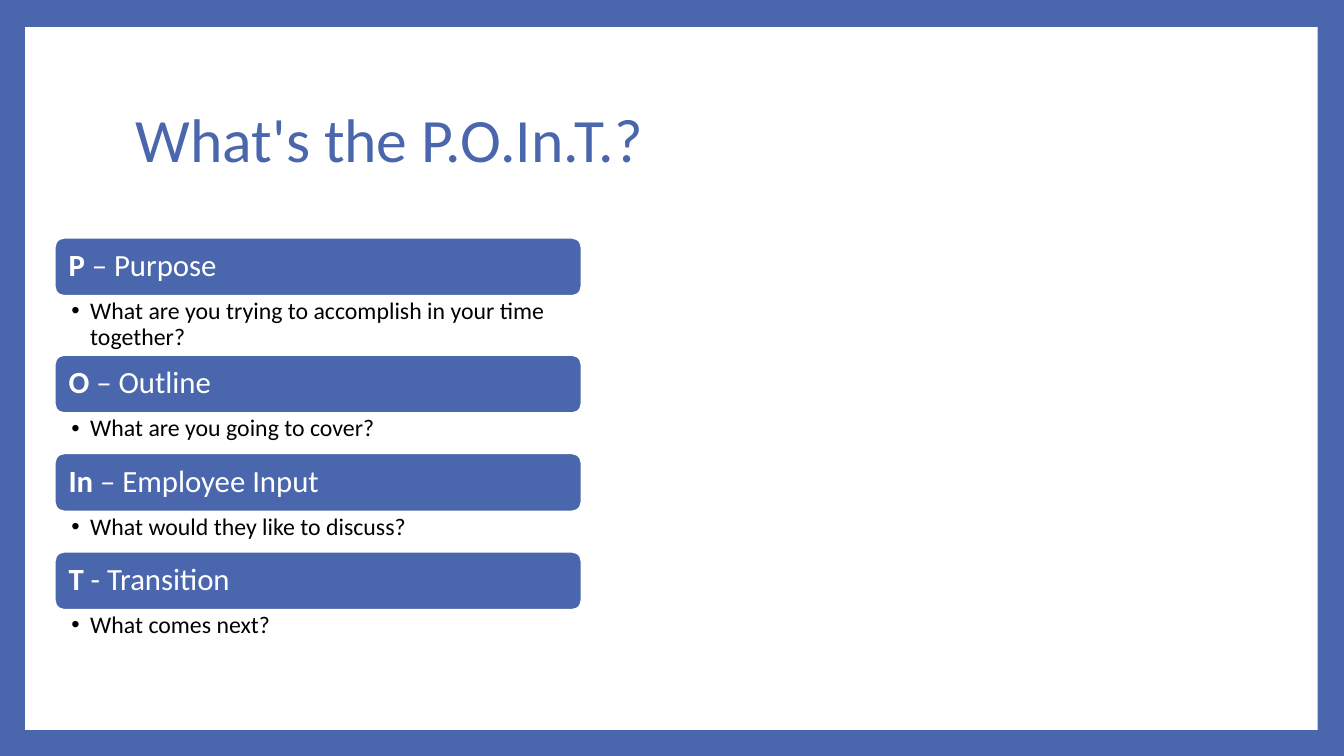
from lxml import etree
from pptx import Presentation
from pptx.dml.color import RGBColor
from pptx.enum.shapes import MSO_SHAPE
from pptx.enum.text import MSO_ANCHOR, PP_ALIGN
from pptx.oxml.ns import qn
from pptx.util import Pt

RECT, ROUNDED = MSO_SHAPE.RECTANGLE, MSO_SHAPE.ROUNDED_RECTANGLE
TOP, MIDDLE = MSO_ANCHOR.TOP, MSO_ANCHOR.MIDDLE
LEFT = PP_ALIGN.LEFT
COLORS = {"blue": "4A66AC", "white": "FFFFFF", "black": "000000"}


def color(name):
    return RGBColor.from_string(COLORS[name])


def write(shape, runs, size, font_color, anchor, inset_x, inset_y, bullet=False):
    tf = shape.text_frame
    tf.word_wrap = True
    tf.vertical_anchor = anchor
    tf.margin_left = tf.margin_right = Pt(inset_x)
    tf.margin_top = tf.margin_bottom = Pt(inset_y)
    p = tf.paragraphs[0]
    p.alignment = LEFT
    p.line_spacing = 0.9
    if bullet:
        pPr = p._p.get_or_add_pPr()
        pPr.set("marL", str(Pt(13.5)))
        pPr.set("indent", str(-Pt(13.5)))
        etree.SubElement(pPr, qn("a:buFont")).set("typeface", "Arial")
        etree.SubElement(pPr, qn("a:buChar")).set("char", "•")
    for text, bold in runs:
        r = p.add_run()
        r.text = text
        r.font.name = "Calibri"
        r.font.size = Pt(size)
        r.font.bold = bold
        r.font.color.rgb = color(font_color)


prs = Presentation()
prs.slide_width, prs.slide_height = Pt(960), Pt(540)
s = prs.slides.add_slide(prs.slide_layouts[6])
s.background.fill.solid()
s.background.fill.fore_color.rgb = color("blue")

panel = s.shapes.add_shape(RECT, Pt(18), Pt(19.3), Pt(923.3), Pt(502))
panel.shadow.inherit = False
panel.fill.solid()
panel.fill.fore_color.rgb = color("white")
panel.line.fill.background()

title = s.shapes.add_textbox(Pt(90), Pt(48.2), Pt(777.6), Pt(106.6))
write(title, [("What's the P.O.In.T.?", False)], 44, "blue", MIDDLE, 7.2, 3.6)

steps = [
    ("P", " – Purpose", "What are you trying to accomplish in your time together?", 42),
    ("O", " – Outline", "What are you going to cover?", 28.5),
    ("In", " – Employee Input", "What would they like to discuss?", 28.5),
    ("T", " - Transition", "What comes next?", 28.5),
]
left, top, width, bar_height = 39, 169.7, 376.5, 41.75
for letters, name, question, question_height in steps:
    bar = s.shapes.add_shape(ROUNDED, Pt(left), Pt(top), Pt(width), Pt(bar_height))
    bar.shadow.inherit = False
    bar.fill.solid()
    bar.fill.fore_color.rgb = color("blue")
    bar.line.color.rgb = color("white")
    bar.line.width = Pt(1.5)
    write(bar, [(letters, True), (name, False)], 22, "white", MIDDLE, 8, 6.5)
    top += bar_height

    sp = s.shapes.add_textbox(Pt(left), Pt(top), Pt(width), Pt(question_height))
    write(sp, [(question, False)], 17, "black", TOP, 12, 2.2, bullet=True)
    top += question_height

prs.save("out.pptx")
